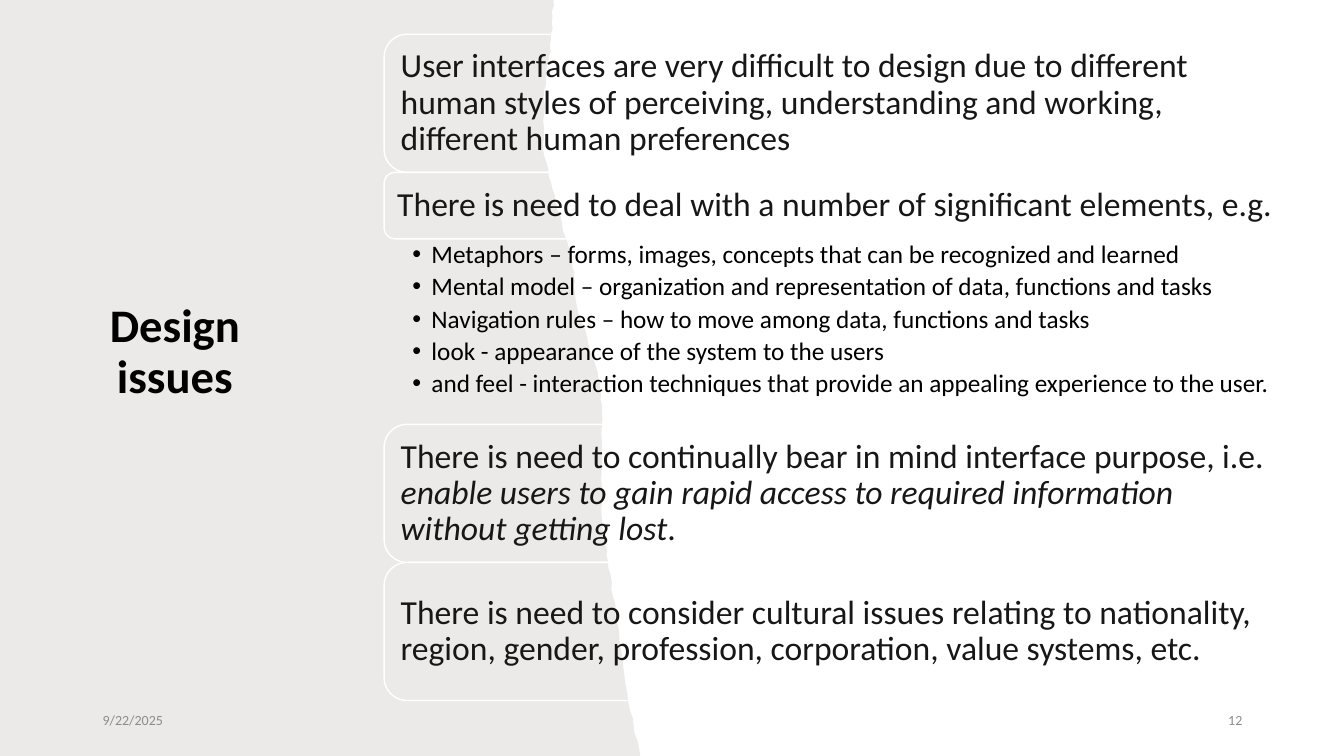
from itertools import pairwise
from math import sin

from lxml.etree import SubElement
from pptx import Presentation
from pptx.dml.color import RGBColor
from pptx.enum.shapes import MSO_SHAPE
from pptx.enum.text import MSO_ANCHOR, PP_ALIGN
from pptx.oxml.ns import qn
from pptx.util import Inches, Pt

COLORS = {"paper": "82766A", "outline": "FFFFFF", "title": "000000",
          "panel": "181717", "bullet": "000000", "footer": "8C8C8C"}
SLIDE_WIDTH, SLIDE_HEIGHT = 13.33, 7.5

# Torn edge: distance from the left at a few heights, given as y: x
EDGE_BENDS = {0: 5.49, 0.45: 5.46, 0.9: 5.4, 1.5: 5.39, 2: 5.51, 2.6: 5.68,
              3: 5.71, 3.7: 5.93, 4: 5.97, 5.2: 5.97, 5.7: 6.05, 6.3: 6.14,
              6.9: 6.22, SLIDE_HEIGHT: 6.35}
EDGE_STEPS, EDGE_ROUGHNESS = 8, 0.01

# Body: blocks stacked from BODY_TOP, each directly below the one before
BODY_LEFT, BODY_TOP, BODY_WIDTH = 3.81, 0.34, 9.03
TALL, SHORT, LIST = 1.37, 0.66, 1.84

DIFFICULTY = [
    ("User interfaces are very difficult to design due to different human styles of "
     "perceiving, understanding and working, different human preferences", False)]
ELEMENTS_INTRO = [
    ("There is need to deal with a number of significant elements, e.g.", False)]
ELEMENTS = [
    "Metaphors – forms, images, concepts that can be recognized and learned",
    "Mental model – organization and representation of data, functions and tasks",
    "Navigation rules – how to move among data, functions and tasks",
    "look - appearance of the system to the users",
    "and feel - interaction techniques that provide an appealing experience to the user.",
]
PURPOSE = [
    ("There is need to continually bear in mind interface purpose, i.e. ", False),
    ("enable users to gain rapid access to required information without getting lost",
     True),
    (".", False)]
CULTURE = [
    ("There is need to consider cultural issues relating to nationality, region, "
     "gender, profession, corporation, value systems, etc.", False)]


def torn_edge():
    """Points down the edge: straight between bends, plus a small ripple."""
    points = []
    for (y0, x0), (y1, x1) in pairwise(EDGE_BENDS.items()):
        for step in range(EDGE_STEPS):
            t = step / EDGE_STEPS
            y = y0 + t * (y1 - y0)
            ripple = EDGE_ROUGHNESS * sin(40 * y) * sin(17 * y)
            points.append((x0 + t * (x1 - x0) + ripple, y))
    return points + [(EDGE_BENDS[SLIDE_HEIGHT], SLIDE_HEIGHT)]


class SlideBuilder:
    font = "Calibri"
    tight = 0.9

    def __init__(self, slide):
        self.s = slide

    def color(self, name):
        return RGBColor.from_string(COLORS[name])

    def frame(self, sp, anchor, insets):
        tf = sp.text_frame
        tf.word_wrap = True
        tf.vertical_anchor = anchor
        (tf.margin_left, tf.margin_top,
         tf.margin_right, tf.margin_bottom) = [Inches(i) for i in insets]
        return tf

    def run(self, p, text, size, color, bold=False, italic=False):
        r = p.add_run()
        r.text = text
        r.font.name = self.font
        r.font.size = Pt(size)
        r.font.bold = bold
        r.font.italic = italic
        r.font.color.rgb = self.color(color)

    def text(self, box, text, size, color, align=PP_ALIGN.LEFT,
             anchor=MSO_ANCHOR.MIDDLE, bold=False):
        sp = self.s.shapes.add_textbox(*[Inches(v) for v in box])
        p = self.frame(sp, anchor, (0.1, 0.05, 0.1, 0.05)).paragraphs[0]
        p.alignment = align
        p.line_spacing = self.tight
        self.run(p, text, size, color, bold)

    def paper(self, edge, opacity):
        outline = [(Inches(x), Inches(y)) for x, y in edge + [(0, SLIDE_HEIGHT)]]
        fb = self.s.shapes.build_freeform(0, 0)
        fb.add_line_segments(outline, close=True)
        sp = fb.convert_to_shape()
        sp.shadow.inherit = False
        sp.line.fill.background()
        sp.fill.solid()
        sp.fill.fore_color.rgb = self.color("paper")
        fill_color = sp._element.spPr.find(qn("a:solidFill"))[0]
        SubElement(fill_color, qn("a:alpha"), val=str(opacity * 1000))

    def panel(self, box, runs):
        sp = self.s.shapes.add_shape(MSO_SHAPE.ROUNDED_RECTANGLE,
                                     *[Inches(v) for v in box])
        sp.shadow.inherit = False
        sp.fill.background()
        sp.line.color.rgb = self.color("outline")
        sp.line.width = Pt(1)
        p = self.frame(sp, MSO_ANCHOR.MIDDLE, [0.1] * 4).paragraphs[0]
        p.alignment = PP_ALIGN.LEFT
        p.line_spacing = self.tight
        for text, italic in runs:
            self.run(p, text, 24, "panel", italic=italic)

    def bullets(self, box, items):
        sp = self.s.shapes.add_textbox(*[Inches(v) for v in box])
        tf = self.frame(sp, MSO_ANCHOR.TOP, (0.28, 0.03, 0.14, 0.03))
        hang = Inches(0.19)
        for i, item in enumerate(items):
            p = tf.add_paragraph() if i else tf.paragraphs[0]
            p.level = 1
            p.line_spacing = self.tight
            p.space_after = Pt(3.6)
            pPr = p._p.get_or_add_pPr()
            pPr.set("marL", str(hang))
            pPr.set("indent", str(-hang))
            SubElement(pPr, qn("a:buFont"), typeface="Arial")
            SubElement(pPr, qn("a:buChar"), char="•")
            self.run(p, item, 18, "bullet")


def main():
    prs = Presentation()
    prs.slide_width, prs.slide_height = Inches(SLIDE_WIDTH), Inches(SLIDE_HEIGHT)
    b = SlideBuilder(prs.slides.add_slide(prs.slide_layouts[6]))

    # Background and title
    b.paper(torn_edge(), opacity=15)
    b.text((0.39, 1.59, 2.69, 2.46), "Design issues", 33.3, "title",
           PP_ALIGN.CENTER, MSO_ANCHOR.BOTTOM, bold=True)

    # Footer
    for left, label, align in [(0.92, "9/22/2025", PP_ALIGN.LEFT),
                               (9.42, "12", PP_ALIGN.RIGHT)]:
        b.text((left, 6.95, 3, 0.4), label, 10, "footer", align)

    # Body blocks, top to bottom
    top = BODY_TOP
    for add_block, height, content in [(b.panel, TALL, DIFFICULTY),
                                       (b.panel, SHORT, ELEMENTS_INTRO),
                                       (b.bullets, LIST, ELEMENTS),
                                       (b.panel, TALL, PURPOSE),
                                       (b.panel, TALL, CULTURE)]:
        add_block((BODY_LEFT, top, BODY_WIDTH, height), content)
        top += height

    prs.save("out.pptx")


if __name__ == "__main__":
    main()
